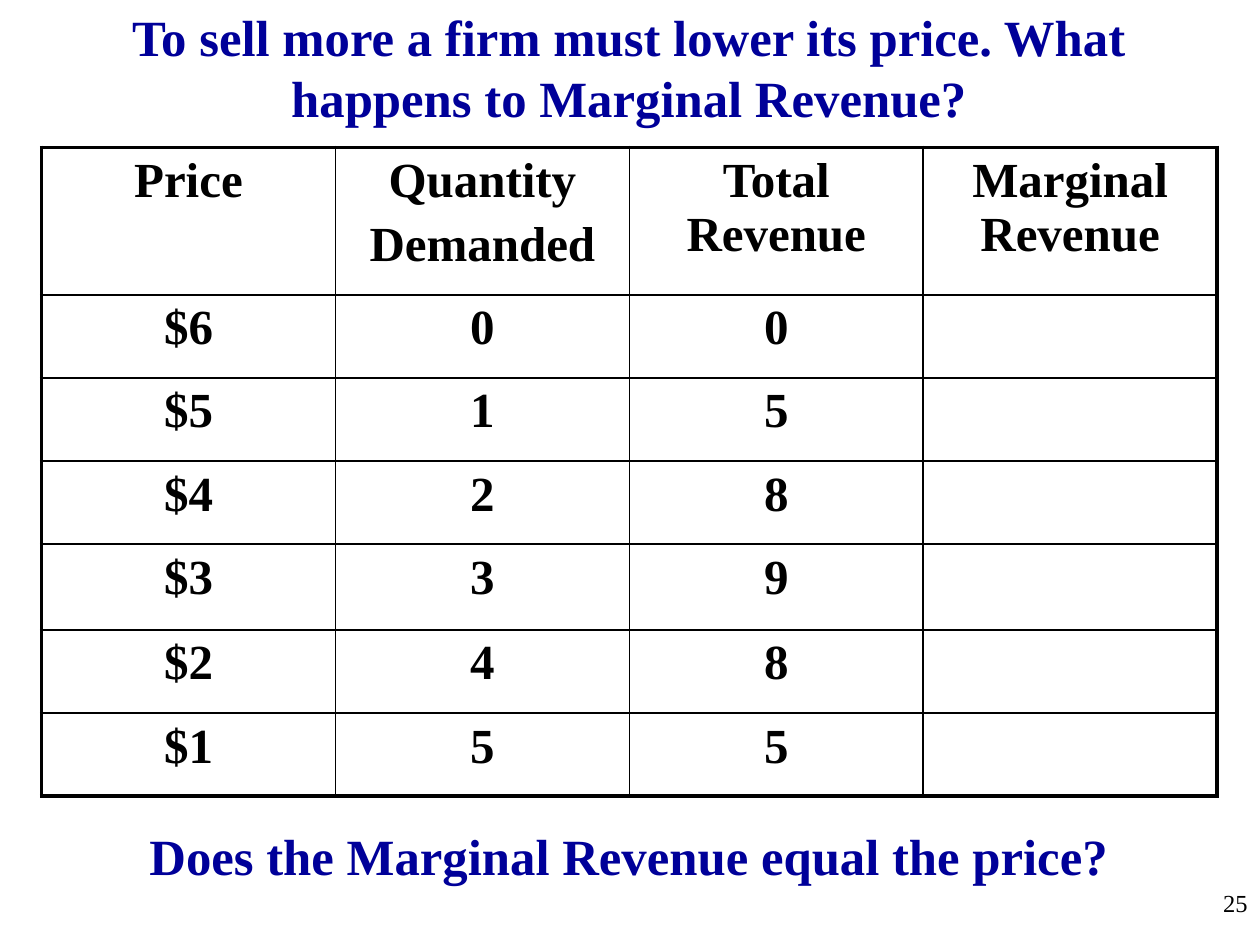
from lxml.etree import SubElement
from pptx import Presentation
from pptx.dml.color import RGBColor
from pptx.enum.text import MSO_AUTO_SIZE, PP_ALIGN
from pptx.oxml.ns import qn
from pptx.util import Inches, Pt

FONT = "Times New Roman"
BLUE, BLACK = "000099", "000000"
MARGIN, WIDTH = 0.33, 9.33
HEADERS = ["Price", "Quantity\nDemanded", "Total Revenue", "Marginal Revenue"]
ROW_HEIGHTS = [1.17, 0.66, 0.66, 0.66, 0.68, 0.66, 0.66]
THIN, THICK = 1, 2.25


def color(value):
    return RGBColor.from_string(value)


def format_text(tf, size, fill, bold=True, align=PP_ALIGN.CENTER):
    for p in tf.paragraphs:
        p.alignment = align
        for r in p.runs:
            r.font.name = FONT
            r.font.size = Pt(size)
            r.font.bold = bold
            r.font.color.rgb = color(fill)


def add_text(slide, text, left, top, width, height, size, fill, **style):
    sp = slide.shapes.add_textbox(*map(Inches, (left, top, width, height)))
    tf = sp.text_frame
    tf.word_wrap = True
    tf.text = text
    format_text(tf, size, fill, **style)
    return tf


def add_heading(slide, text, top, height):
    tf = add_text(slide, text, MARGIN, top, WIDTH, height, 29, BLUE)
    tf.auto_size = MSO_AUTO_SIZE.SHAPE_TO_FIT_TEXT


def set_border(cell, side, width):
    ln = SubElement(cell._tc.get_or_add_tcPr(), qn(f"a:ln{side}"), w=str(Pt(width)))
    fill = SubElement(ln, qn("a:solidFill"))
    SubElement(fill, qn("a:srgbClr"), val=BLACK)


def add_revenue_table(slide, rows):
    n_rows, n_cols = len(rows), len(HEADERS)
    frame = slide.shapes.add_table(n_rows, n_cols, Inches(MARGIN), Inches(1.17),
                                   Inches(WIDTH), Inches(sum(ROW_HEIGHTS)))
    table = frame.table
    table.first_row = table.horz_banding = False
    for column in table.columns:
        column.width = Inches(WIDTH / n_cols)
    for i, values in enumerate(rows):
        table.rows[i].height = Inches(ROW_HEIGHTS[i])
        for j, value in enumerate(values):
            cell = table.cell(i, j)
            cell.text_frame.text = value
            format_text(cell.text_frame, 28, BLACK)
            for p in cell.text_frame.paragraphs:
                p.space_before = Pt(5.6)
            # Thick outer frame, thin inner grid
            outer = {"L": j == 0, "R": j == n_cols - 1,
                     "T": i == 0, "B": i == n_rows - 1}
            for side, is_outer in outer.items():
                set_border(cell, side, THICK if is_outer else THIN)
            cell.fill.background()


def main():
    prs = Presentation()
    prs.slide_width, prs.slide_height = Inches(10), Inches(7.5)
    slide = prs.slides.add_slide(prs.slide_layouts[6])

    # Opening question
    add_heading(slide, "To sell more a firm must lower its price. "
                "What happens to Marginal Revenue?", 0, 1.06)

    # Demand schedule: total revenue is price times quantity
    schedule = [[f"${6 - q}", str(q), str((6 - q) * q), ""] for q in range(6)]
    add_revenue_table(slide, [HEADERS] + schedule)

    # Closing question and page number
    add_heading(slide, "Does the Marginal Revenue equal the price?", 6.5, 0.58)
    add_text(slide, "25", 7.92, 7, 2.08, 0.5, 14, BLACK,
             bold=False, align=PP_ALIGN.RIGHT)

    prs.save("out.pptx")


if __name__ == "__main__":
    main()
